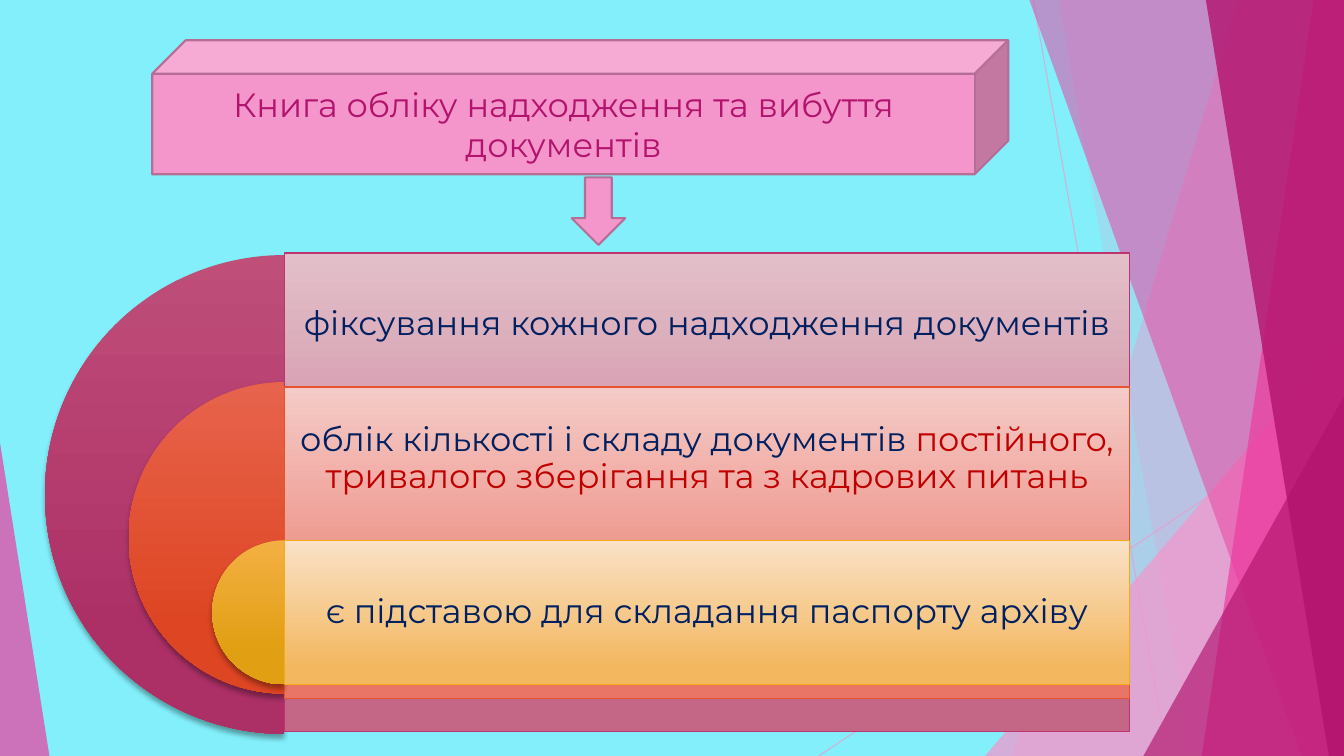
from dataclasses import dataclass

from lxml.etree import SubElement
from pptx import Presentation
from pptx.dml.color import RGBColor
from pptx.enum.shapes import MSO_CONNECTOR as Connector, MSO_SHAPE as Shape
from pptx.enum.text import MSO_ANCHOR as Anchor, PP_ALIGN as Align
from pptx.oxml.ns import qn
from pptx.util import Inches, Pt

FONT = "Montserrat"
COLORS = {
    "background": "82EFFA", "pink": "F496CB", "rose": "EB3D9F", "magenta": "B2136D",
    "outline": "B56F96", "navy": "002060", "red": "C00000", "black": "000000",
}
TITLE = "Книга обліку надходження та вибуття документів"


@dataclass
class Box:
    left: int
    top: int
    width: int
    height: int

    def point(self, x, y):
        return int(self.left + self.width * x / 100), int(self.top + self.height * y / 100)

    def area(self, left, top, width, height):
        return Box(*self.point(left, top), int(self.width * width / 100), int(self.height * height / 100))

    def bounds(self):
        return self.left, self.top, self.width, self.height


@dataclass
class Purpose:
    top: float
    height: float
    pie_top: float
    pie_colors: tuple
    bar_colors: tuple
    line: str
    runs: list


PURPOSES = [
    Purpose(0, 99.58, 0.42, ("BF4E79", "AC3066"), ("E2BFC9", "C46787"), "BC356F",
            [("фіксування кожного надходження документів", "navy")]),
    Purpose(27.88, 64.78, 26.83, ("E7634C", "DE4522"), ("F5CBC7", "E97566"), "E65331",
            [("облік кількості і складу документів ", "navy"),
             ("постійного, тривалого зберігання та з кадрових питань", "red")]),
    Purpose(59.75, 29.98, 59.75, ("F3B042", "E19F13"), ("FAE2C8", "F3B75F"), "F2AC19",
            [("є підставою для складання паспорту архіву", "navy")]),
]


def rgb(name):
    return RGBColor.from_string(COLORS.get(name, name))


def fill_solid(shape, color, opacity=100):
    shape.shadow.inherit = False
    shape.fill.solid()
    shape.fill.fore_color.rgb = rgb(color)
    shape.line.fill.background()
    set_opacity(shape, opacity)


def set_opacity(shape, opacity):
    color = next(shape._element.spPr.iter(qn("a:srgbClr")))
    SubElement(color, qn("a:alpha"), val=str(opacity * 1000))


def fill_gradient(shape, colors, end):
    shape.shadow.inherit = False
    shape.fill.gradient()
    shape.fill.gradient_angle = 270
    for stop, color, position in zip(shape.fill.gradient_stops, colors, (0, end)):
        stop.color.rgb = rgb(color)
        stop.position = position
    shape.line.fill.background()


def outline(shape, color, width):
    shape.line.color.rgb = rgb(color)
    shape.line.width = Pt(width)


def drop_shadow(shape):
    effects = shape._element.spPr.find(qn("a:effectLst"))
    shadow = SubElement(effects, qn("a:outerShdw"), blurRad=str(Pt(4)), dist=str(Pt(3)),
                        dir="5400000", rotWithShape="0")
    color = SubElement(shadow, qn("a:srgbClr"), val=COLORS["black"])
    SubElement(color, qn("a:alpha"), val="35000")


def write_text(shape, runs):
    frame = shape.text_frame
    frame.word_wrap = True
    frame.vertical_anchor = Anchor.MIDDLE
    paragraph = frame.paragraphs[0]
    paragraph.alignment = Align.CENTER
    paragraph.font.size = Pt(24)
    paragraph.font.name = FONT
    for text, color in runs:
        run = paragraph.add_run()
        run.text = text
        run.font.color.rgb = rgb(color)
    return frame


def add_ray(shapes, box, start, end):
    ray = shapes.add_connector(Connector.STRAIGHT, *box.point(*start), *box.point(*end))
    outline(ray, "pink", 0.75)
    set_opacity(ray, 70)
    SubElement(ray._element.spPr, qn("a:effectLst"))


def add_band(shapes, box, top_x, bottom_x, color, opacity):
    builder = shapes.build_freeform(*box.point(top_x, 0))
    builder.add_line_segments([box.point(100, 0), box.point(100, 100), box.point(bottom_x, 100)])
    fill_solid(builder.convert_to_shape(), color, opacity)


def add_corner(shapes, box, left, top, width, apex, color, opacity):
    corner = shapes.add_shape(Shape.ISOSCELES_TRIANGLE, *box.area(left, top, width, 100 - top).bounds())
    corner.adjustments[0] = apex
    fill_solid(corner, color, opacity)


def add_backdrop(shapes, box):
    add_ray(shapes, box, (76.89, 0), (86.87, 100))
    add_ray(shapes, box, (100, 53.73), (60.92, 100))
    add_band(shapes, box, 92.12, 75.32, "pink", 36)
    add_band(shapes, box, 78.77, 88.75, "pink", 20)
    add_corner(shapes, box, 73.29, 44.4, 26.71, 1, "pink", 72)
    add_band(shapes, box, 76.59, 96.85, "rose", 50)
    add_band(shapes, box, 97.75, 89.42, "rose", 70)
    add_band(shapes, box, 89.72, 98.87, "magenta", 80)
    add_corner(shapes, box, 85.07, 52.4, 14.93, 1, "magenta", 66)
    add_corner(shapes, box, 0, 58.53, 3.68, 0, "rose", 70)


def add_header(shapes, box):
    cube = shapes.add_shape(Shape.CUBE, *box.area(0, 0, 100, 65.5).bounds())
    arrow = shapes.add_shape(Shape.DOWN_ARROW, *box.area(49, 67, 6.24, 33).bounds())
    for shape in (cube, arrow):
        fill_solid(shape, "pink")
        outline(shape, "outline", 1.5)
    write_text(cube, [(TITLE, "magenta")])


def add_purposes(shapes, box):
    bar_left, bar_width, label_height = 21.9, 78.1, 29.98
    for purpose in PURPOSES:
        bar_box = box.area(bar_left, purpose.top, bar_width, purpose.height)
        diameter = bar_box.height
        pie_top = box.point(0, purpose.pie_top)[1]
        pie = shapes.add_shape(Shape.PIE, bar_box.left - diameter // 2, pie_top, diameter, diameter)
        pie.adjustments[0], pie.adjustments[1] = 54, 162
        fill_gradient(pie, purpose.pie_colors, 0.78)
        drop_shadow(pie)

        bar = shapes.add_shape(Shape.RECTANGLE, *bar_box.bounds())
        fill_gradient(bar, purpose.bar_colors, 0.88)
        outline(bar, purpose.line, 1)

        label_box = box.area(bar_left, purpose.top, bar_width, label_height)
        frame = write_text(shapes.add_textbox(*label_box.bounds()), purpose.runs)
        frame.margin_left = frame.margin_right = Inches(0.1)
        frame.margin_top = frame.margin_bottom = Inches(0.1)
        frame.paragraphs[0].line_spacing = 0.9


def main():
    presentation = Presentation()
    presentation.slide_width, presentation.slide_height = Inches(13.33), Inches(7.5)
    slide = presentation.slides.add_slide(presentation.slide_layouts[6])
    slide.background.fill.solid()
    slide.background.fill.fore_color.rgb = rgb("background")
    page = Box(0, 0, presentation.slide_width, presentation.slide_height)
    add_backdrop(slide.shapes, page)
    add_header(slide.shapes, page.area(11.33, 5.33, 63.69, 27.07))
    add_purposes(slide.shapes, page.area(3.53, 33.47, 80.5, 63.6))
    presentation.save("out.pptx")


if __name__ == "__main__":
    main()
